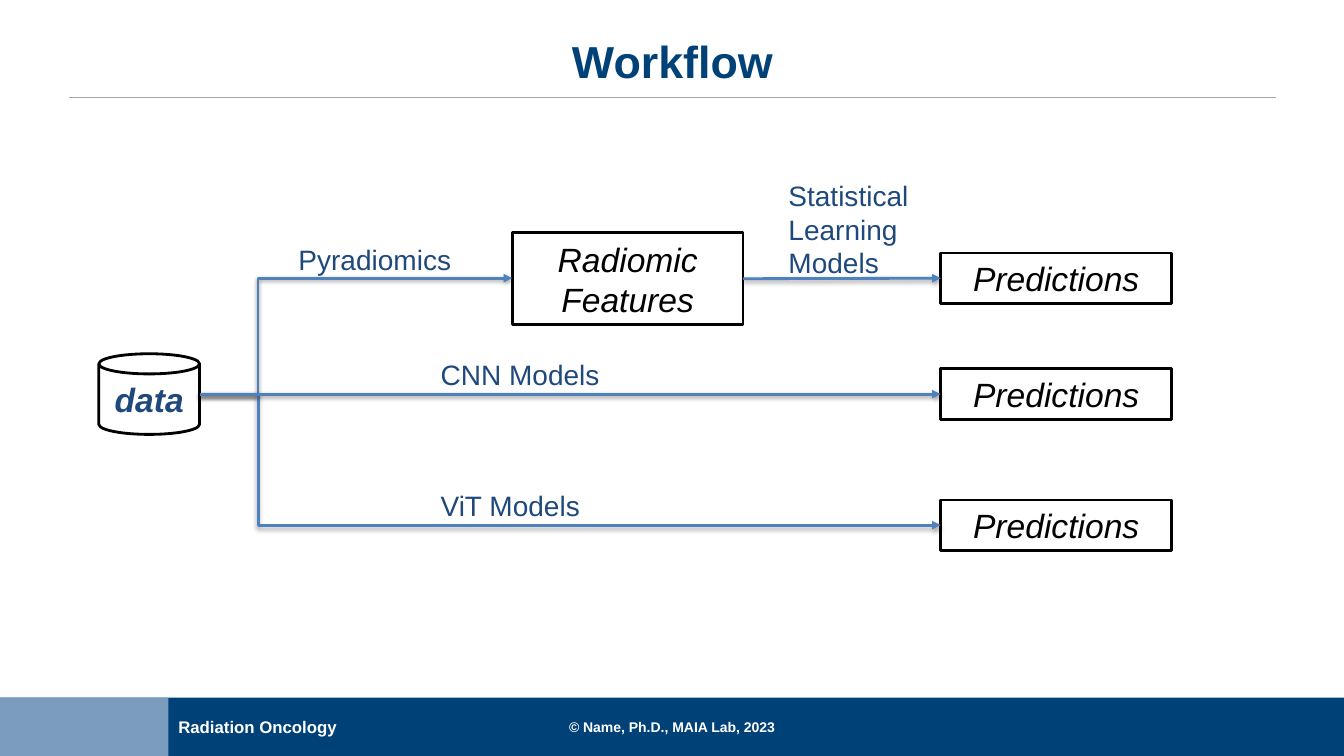
import pptx
import pptx.dml.color
import pptx.enum.shapes
import pptx.enum.text
import pptx.oxml
import pptx.oxml.ns
import pptx.util

Inches = pptx.util.Inches
Pt = pptx.util.Pt
SHAPE = pptx.enum.shapes.MSO_SHAPE
LINK = pptx.enum.shapes.MSO_CONNECTOR
ANCHOR = pptx.enum.text.MSO_ANCHOR
ALIGN = pptx.enum.text.PP_ALIGN

HUES = {
    "navy": "004278", "pale": "7C9CBD", "rule": "A6A6A6", "arrow": "4F81BD",
    "label": "1F497D", "black": "000000", "white": "FFFFFF",
}
TITLE = {"size": Pt(32), "bold": True}
NODE = {"size": Pt(24), "italic": True}
LABEL = {"size": Pt(20)}
UNIT = {"size": Pt(12), "bold": True}
CREDIT = {"size": Pt(10), "bold": True}

NS = pptx.oxml.ns.nsdecls("a")
SHADOW = (
    f'<a:effectLst {NS}><a:outerShdw blurRad="40000" dist="20000" dir="5400000" '
    'rotWithShape="0"><a:srgbClr val="000000"><a:alpha val="38000"/></a:srgbClr>'
    "</a:outerShdw></a:effectLst>"
)
FLAT = f"<a:effectLst {NS}/>"
HEAD = f'<a:tailEnd {NS} type="triangle"/>'


def hue(name):
    """Return the named colour."""
    return pptx.dml.color.RGBColor.from_string(HUES[name])


def write(shape, text, style, color, align=ALIGN.LEFT, anchor=ANCHOR.TOP, inset=None):
    """Fill a shape with styled text, one paragraph per line."""
    frame = shape.text_frame
    frame.text = text
    form = {"word_wrap": True, "vertical_anchor": anchor}
    if inset is not None:
        for side in ("left", "right", "top", "bottom"):
            form[f"margin_{side}"] = Inches(inset)
    for key, value in form.items():
        setattr(frame, key, value)
    for para in frame.paragraphs:
        para.alignment = align
        for key, value in {"name": "Arial", **style}.items():
            setattr(para.font, key, value)
        para.font.color.rgb = hue(color)


def add_text(slide, area, text, style, color, **form):
    """Add a text box."""
    box = slide.shapes.add_textbox(*map(Inches, area))
    write(box, text, style, color, **form)


def add_block(slide, kind, area, fill, edge=None):
    """Add a filled shape, outlined if an edge colour is given."""
    block = slide.shapes.add_shape(kind, *map(Inches, area))
    block.shadow.inherit = False
    block.fill.solid()
    block.fill.fore_color.rgb = hue(fill)
    if edge:
        block.line.color.rgb = hue(edge)
        block.line.width = Pt(2)
    else:
        block.line.fill.background()
    return block


def add_node(slide, kind, area, text, color="black", style=NODE):
    """Add an outlined workflow step."""
    node = add_block(slide, kind, area, "white", "black")
    write(node, text, style, color, align=ALIGN.CENTER, anchor=ANCHOR.MIDDLE)
    return node


def add_line(slide, kind, start, end, color, width, effect):
    """Add a connector with the given effect list."""
    line = slide.shapes.add_connector(kind, *map(Inches, (*start, *end)))
    line.line.color.rgb = hue(color)
    line.line.width = Pt(width)
    line._element.spPr.append(pptx.oxml.parse_xml(effect))
    return line


def add_arrow(slide, start, end, bend=None):
    """Add a shadowed arrow, turning at the x position bend if given."""
    kind = LINK.ELBOW if bend else LINK.STRAIGHT
    arrow = add_line(slide, kind, start, end, "arrow", 2, SHADOW)
    arrow.line._get_or_add_ln().append(pptx.oxml.parse_xml(HEAD))
    if bend:
        part = round((bend - start[0]) / (end[0] - start[0]) * 100000)
        geom = arrow._element.spPr.find(pptx.oxml.ns.qn("a:prstGeom"))
        for child in list(geom):
            geom.remove(child)
        geom.append(pptx.oxml.parse_xml(
            f'<a:avLst {NS}><a:gd name="adj1" fmla="val {part}"/></a:avLst>'))
    return arrow


def add_frame(slide):
    """Add the title, its rule and the footer."""
    add_block(slide, SHAPE.RECTANGLE, (0, 6.92, 13.33, 0.58), "navy")
    add_block(slide, SHAPE.RECTANGLE, (0, 6.92, 1.67, 0.58), "pale")
    add_text(slide, (1.67, 7.06, 2.4, 0.3), "Radiation Oncology", UNIT, "white")
    add_line(slide, LINK.STRAIGHT, (0.68, 0.97), (12.66, 0.97), "rule", 1, FLAT)
    add_text(slide, (0.68, 0.25, 11.98, 0.62), "Workflow", TITLE, "navy",
             align=ALIGN.CENTER, anchor=ANCHOR.BOTTOM, inset=0)
    add_text(slide, (4, 7.01, 5.33, 0.4), "© Name, Ph.D., MAIA Lab, 2023", CREDIT,
             "white", align=ALIGN.CENTER, anchor=ANCHOR.MIDDLE)


def add_flow(slide):
    """Add the three paths from data to predictions."""
    add_node(slide, SHAPE.CAN, (0.98, 3.51, 1, 0.8), "data", "label",
             {**NODE, "bold": True})
    steps = add_node(slide, SHAPE.RECTANGLE, (5.08, 2.31, 2.29, 0.91),
                     "Radiomic Features")
    rows = (2.76, 3.91, 5.21)
    goals = [add_node(slide, SHAPE.RECTANGLE, (9.33, y - 0.25, 2.29, 0.5), "Predictions")
             for y in rows]
    start = (1.98, rows[1])
    add_arrow(slide, start, (5.08, rows[0]), 2.56)
    add_arrow(slide, start, (9.33, rows[2]), 2.56)
    link = add_arrow(slide, (7.37, rows[0]), (9.33, rows[0]))
    link.begin_connect(steps, 3)
    link.end_connect(goals[0], 1)
    add_arrow(slide, start, (9.33, rows[1])).end_connect(goals[1], 1)
    for x, y, high, text in (
        (2.96, 2.41, 0.34, "Pyradiomics"),
        (7.82, 1.77, 1.01, "Statistical\nLearning\nModels"),
        (4.37, 3.55, 0.34, "CNN Models"),
        (4.37, 4.85, 0.34, "ViT Models"),
    ):
        add_text(slide, (x, y, 2.57, high), text, LABEL, "label", inset=0)


def main():
    """Build and save the workflow slide."""
    deck = pptx.Presentation()
    deck.slide_width = Inches(13.33)
    deck.slide_height = Inches(7.5)
    slide = deck.slides.add_slide(deck.slide_layouts[6])
    add_frame(slide)
    add_flow(slide)
    deck.save("out.pptx")


if __name__ == "__main__":
    main()
